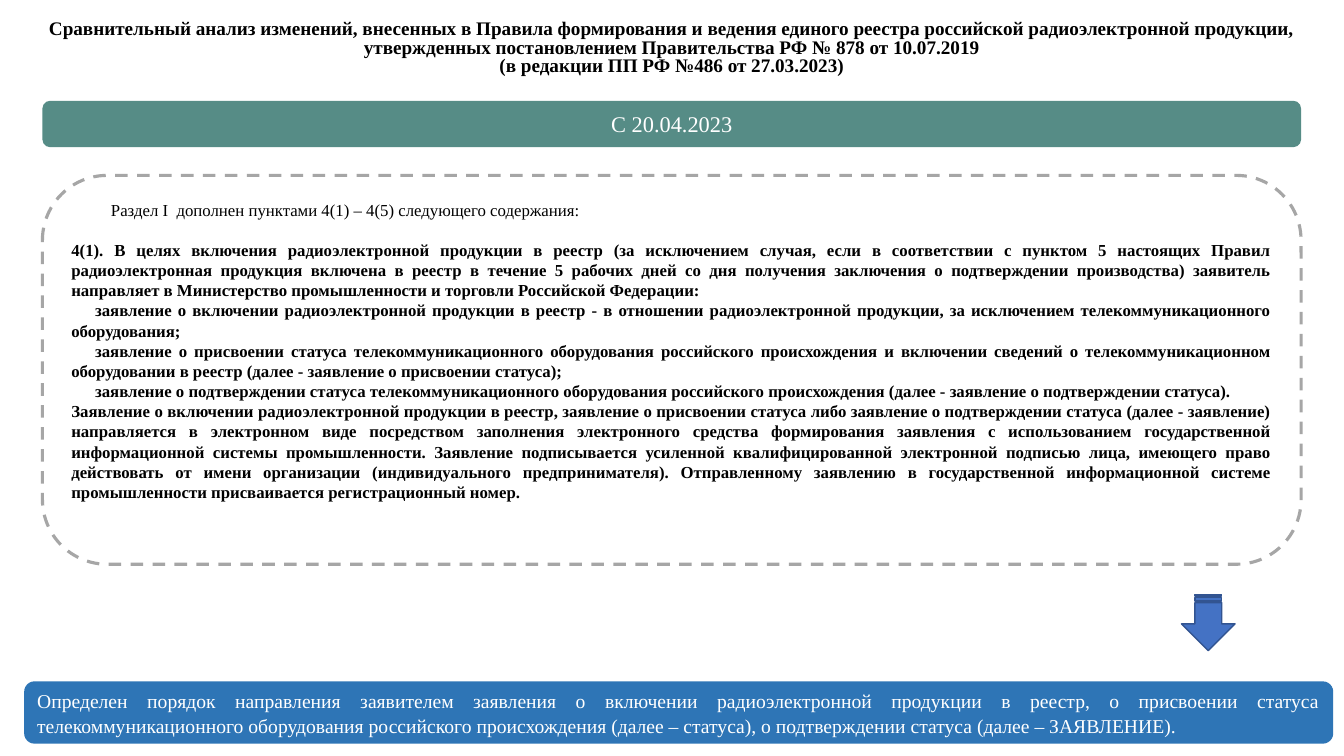
from dataclasses import dataclass

from pptx import Presentation
from pptx import util as u
from pptx.dml.color import RGBColor
from pptx.enum import dml, shapes, text


@dataclass(frozen=True)
class Theme:
    font: str = "Times New Roman"
    ink: str = "000000"
    white: str = "FFFFFF"
    date_fill: str = "568C86"
    summary_fill: str = "2E75B6"
    arrow_fill: str = "4472C4"
    arrow_line: str = "325491"
    frame_line: str = "A6A6A6"
    title_size: float = 13.7
    date_size: float = 16
    body_size: float = 12
    summary_size: float = 14


THEME = Theme()
CENTER, JUSTIFY = text.PP_ALIGN.CENTER, text.PP_ALIGN.JUSTIFY

TITLE = (
    "Сравнительный анализ изменений, внесенных в Правила формирования и ведения единого реестра "
    "российской радиоэлектронной продукции, утвержденных постановлением Правительства РФ "
    "№ 878 от 10.07.2019",
    "(в редакции ПП РФ №486 от 27.03.2023)",
)
DATE = "С 20.04.2023"
SECTION = "Раздел I  дополнен пунктами 4(1) – 4(5) следующего содержания:"
RULE = (
    "4(1). В целях включения радиоэлектронной продукции в реестр (за исключением случая, если в "
    "соответствии с пунктом 5 настоящих Правил радиоэлектронная продукция включена в реестр в "
    "течение 5 рабочих дней со дня получения заключения о подтверждении производства) заявитель "
    "направляет в Министерство промышленности и торговли Российской Федерации:"
)
APPLICATIONS = (
    "заявление о включении радиоэлектронной продукции в реестр - в отношении радиоэлектронной "
    "продукции, за исключением телекоммуникационного оборудования;",
    "заявление о присвоении статуса телекоммуникационного оборудования российского происхождения "
    "и включении сведений о телекоммуникационном оборудовании в реестр (далее - заявление о "
    "присвоении статуса);",
    "заявление о подтверждении статуса телекоммуникационного оборудования российского "
    "происхождения (далее - заявление о подтверждении статуса).",
)
FILING = (
    "Заявление о включении радиоэлектронной продукции в реестр, заявление о присвоении статуса "
    "либо заявление о подтверждении статуса (далее - заявление) направляется в электронном виде "
    "посредством заполнения электронного средства формирования заявления с использованием "
    "государственной информационной системы промышленности. Заявление подписывается усиленной "
    "квалифицированной электронной подписью лица, имеющего право действовать от имени организации "
    "(индивидуального предпринимателя). Отправленному заявлению в государственной информационной "
    "системе промышленности присваивается регистрационный номер."
)
SUMMARY = (
    "Определен порядок направления заявителем заявления о включении радиоэлектронной продукции в "
    "реестр, о присвоении статуса телекоммуникационного оборудования российского происхождения "
    "(далее – статуса), о подтверждении статуса (далее – ЗАЯВЛЕНИЕ)."
)


def cm_box(left, top, width, height):
    return tuple(u.Cm(length) for length in (left, top, width, height))


def add_panel(slide, box, kind, fill=None, line=None, line_width=1):
    panel = slide.shapes.add_shape(kind, *box)
    panel.shadow.inherit = False
    if fill:
        panel.fill.solid()
        panel.fill.fore_color.rgb = RGBColor.from_string(fill)
    else:
        panel.fill.background()
    if line:
        panel.line.color.rgb = RGBColor.from_string(line)
        panel.line.width = u.Pt(line_width)
    else:
        panel.line.fill.background()
    return panel


def write(shape, paragraphs, anchor, size, color, align, spacing=1.0, bold=False):
    frame = shape.text_frame
    frame.word_wrap = True
    frame.vertical_anchor = anchor
    for index, words in enumerate(paragraphs):
        paragraph = frame.paragraphs[0] if index == 0 else frame.add_paragraph()
        paragraph.alignment = align
        paragraph.line_spacing = spacing
        run = paragraph.add_run()
        run.text = words
        run.font.name = THEME.font
        run.font.size = u.Pt(size)
        run.font.bold = bold
        run.font.color.rgb = RGBColor.from_string(color)
    return frame.paragraphs


def add_title(slide, box):
    title = slide.shapes.add_textbox(*box)
    write(title, TITLE, text.MSO_ANCHOR.BOTTOM, THEME.title_size, THEME.ink, CENTER, 0.8, True)


def add_banner(slide, box, words, fill, size, align, spacing=1.0):
    banner = add_panel(slide, box, shapes.MSO_SHAPE.ROUNDED_RECTANGLE, fill)
    write(banner, [words], text.MSO_ANCHOR.MIDDLE, size, THEME.white, align, spacing)


def add_rules(slide, box):
    """Dashed frame with the section heading and the clauses added to it."""
    frame = add_panel(slide, box, shapes.MSO_SHAPE.ROUNDED_RECTANGLE,
                      line=THEME.frame_line, line_width=2.25)
    frame.line.dash_style = dml.MSO_LINE.DASH
    heading, _, *clauses = write(frame, (SECTION, RULE, *APPLICATIONS, FILING),
                                 text.MSO_ANCHOR.TOP, THEME.body_size, THEME.ink, JUSTIFY, bold=True)
    heading.runs[0].font.bold = False
    heading.space_after = u.Pt(THEME.body_size * 1.2)
    indent_first_line(heading, 1)
    for clause in clauses[:len(APPLICATIONS)]:
        indent_first_line(clause, 0.6)


def indent_first_line(paragraph, centimetres):
    properties = paragraph._p.get_or_add_pPr()
    properties.set("marL", "0")
    properties.set("indent", str(u.Cm(centimetres)))


def add_down_arrow(slide, box):
    arrow = add_panel(slide, box, shapes.MSO_SHAPE.STRIPED_RIGHT_ARROW,
                      THEME.arrow_fill, THEME.arrow_line)
    arrow.rotation = 90


def build_slide(presentation):
    slide = presentation.slides.add_slide(presentation.slide_layouts[6])
    add_rules(slide, cm_box(1.07, 4.42, 31.72, 9.8))
    add_banner(slide, cm_box(1.07, 2.54, 31.72, 1.17), DATE,
               THEME.date_fill, THEME.date_size, CENTER)
    add_down_arrow(slide, cm_box(29.74, 15.01, 1.42, 1.35))
    add_title(slide, cm_box(0.84, 0.3, 32.18, 1.75))
    add_banner(slide, cm_box(0.61, 17.17, 32.99, 1.57), SUMMARY,
               THEME.summary_fill, THEME.summary_size, JUSTIFY, 1.07)


def main():
    presentation = Presentation()
    presentation.slide_width = u.Cm(33.87)
    presentation.slide_height = u.Cm(19.05)
    build_slide(presentation)
    presentation.save("out.pptx")


if __name__ == "__main__":
    main()
